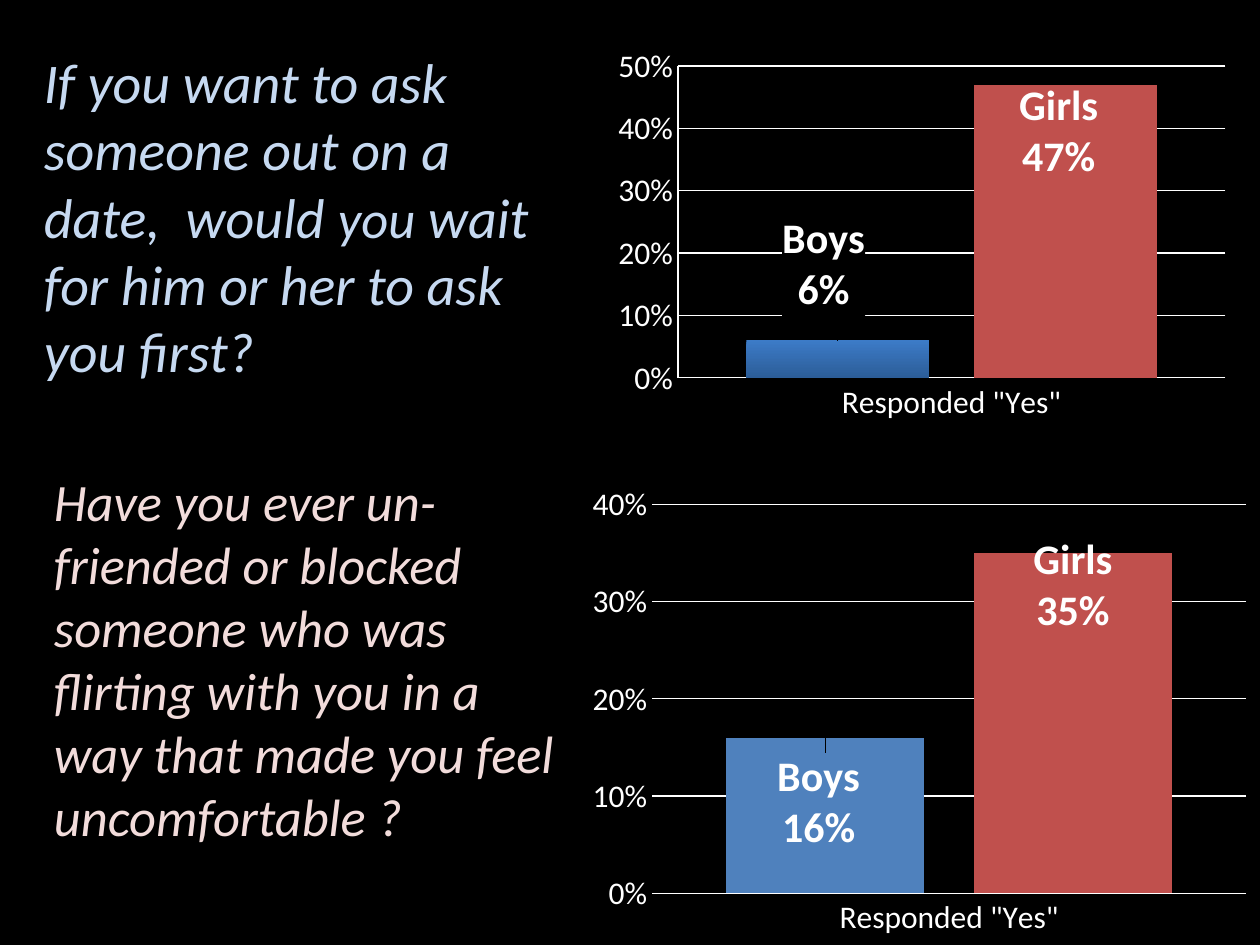
from lxml import etree
from pptx import Presentation
from pptx.chart.data import CategoryChartData
from pptx.dml.color import RGBColor
from pptx.enum.chart import XL_CHART_TYPE, XL_LABEL_POSITION as Pos, XL_TICK_MARK as Tick
from pptx.enum.text import MSO_AUTO_SIZE as Auto
from pptx.oxml import parse_xml
from pptx.oxml.ns import nsdecls, qn
from pptx.util import Inches, Pt

COLORS = {
    "black": "000000", "white": "FFFFFF", "ice": "C6D9F1", "blush": "F2DCDB",
    "boys": "4F81BD", "girls": "C0504D", "boys_top": "3C7BC7", "boys_bottom": "2C5D98",
}
FONT = "Calibri"


def rgb(name):
    return RGBColor.from_string(COLORS[name])


def layout_xml(target="", **values):
    """Manual chart layout, as fractions of the chart's size."""
    parts = "".join(f'<c:{key} val="{value}"/>' for key, value in values.items())
    return parse_xml(f'<c:layout {nsdecls("c")}><c:manualLayout>{target}{parts}'
                     "</c:manualLayout></c:layout>")


class SlideBuilder:
    def __init__(self, prs):
        self.s = prs.slides.add_slide(prs.slide_layouts[6])
        fill = self.s.background.fill
        fill.solid()
        fill.fore_color.rgb = rgb("black")

    def question(self, box, color, runs):
        tf = self.s.shapes.add_textbox(*map(Inches, box)).text_frame
        tf.word_wrap = True
        tf.auto_size = Auto.SHAPE_TO_FIT_TEXT
        p = tf.paragraphs[0]
        for text, size in runs:
            r = p.add_run()
            r.text = text
            r.font.name, r.font.size, r.font.italic = FONT, Pt(size), True
            r.font.color.rgb = rgb(color)

    def chart(self, box, values, top, plot_area):
        data = CategoryChartData(number_format="0%")
        data.categories = ['Responded "Yes"']
        for name, value in values.items():
            data.add_series(name, [value])
        chart = self.s.shapes.add_chart(
            XL_CHART_TYPE.COLUMN_CLUSTERED, *map(Inches, box), data).chart
        chart.has_legend = chart.has_title = False
        self.style_font(chart.font, 18)

        # Axes
        axis = chart.value_axis
        axis.minimum_scale, axis.maximum_scale, axis.major_unit = 0, top, 0.1
        axis.tick_labels.number_format = "0%"
        axis.tick_labels.number_format_is_linked = False
        axis.has_major_gridlines = True
        for ax in (axis, chart.category_axis):
            ax.major_tick_mark = ax.minor_tick_mark = Tick.NONE
        for part in (axis, chart.category_axis, axis.major_gridlines):
            part.format.line.color.rgb = rgb("white")
            part.format.line.width = Pt(0.75)

        # Columns
        plot = chart.plots[0]
        plot.gap_width, plot.overlap, plot.vary_by_categories = 75, -25, False
        for series in plot.series:
            series.format.fill.solid()
            series.format.fill.fore_color.rgb = rgb(series.name.lower())

        # Inner plot area
        area = chart._chartSpace.find(".//" + qn("c:plotArea"))
        for old in area.findall(qn("c:layout")):
            area.remove(old)
        x, y, w, h = plot_area
        target = '<c:layoutTarget val="inner"/><c:xMode val="edge"/><c:yMode val="edge"/>'
        area.insert(0, layout_xml(target, x=x, y=y, w=w, h=h))
        return chart

    def style_font(self, font, size, bold=False):
        font.name, font.size, font.bold = FONT, Pt(size), bold
        font.color.rgb = rgb("white")

    def label(self, series, dx, dy, backed=False):
        """Name over value, shifted from the top of the column."""
        label = series.points[0].data_label
        self.style_font(label.font, 24, bold=True)
        label.position = Pos.OUTSIDE_END
        el = series._element.find(".//" + qn("c:dLbl"))
        el.find(qn("c:showSerName")).set("val", "1")
        etree.SubElement(el, qn("c:separator")).text = "\n"
        el.insert(1, layout_xml(x=dx, y=dy))
        if backed:
            for old in el.findall(qn("c:spPr")):
                el.remove(old)
            el.insert(2, parse_xml(
                f'<c:spPr {nsdecls("c", "a")}><a:solidFill><a:srgbClr '
                f'val="{COLORS["black"]}"/></a:solidFill></c:spPr>'))

    def shade(self, series, first, last):
        fill = series.format.fill
        fill.gradient()
        fill.gradient_angle = 270
        for stop, color in zip(fill.gradient_stops, (first, last)):
            stop.color.rgb = rgb(color)


def main():
    prs = Presentation()
    prs.slide_width, prs.slide_height = Inches(10), Inches(7.5)
    slide = SlideBuilder(prs)

    # Asking someone out
    asking = slide.chart((4.5, 0, 5.5, 3.75), {"Boys": 0.06, "Girls": 0.47},
                         0.5, (0.16, 0.14, 0.79, 0.66))
    boys, girls = asking.plots[0].series
    slide.shade(boys, "boys_top", "boys_bottom")
    slide.label(boys, -0.02, -0.04, backed=True)
    slide.label(girls, -0.01, 0.22)
    slide.question((0.25, 0.33, 4.33, 2.79), "ice", [
        ("If you want to ask someone out on a date,  would ", 32),
        ("you", 30),
        (" wait for him or her to ask you first?", 32)])

    # Blocking someone
    slide.question((0.33, 3.67, 4.33, 3.13), "blush", [
        ("Have you ever un-friended or blocked someone who was flirting with you "
         "in a way that made you feel uncomfortable ?", 30)])
    blocking = slide.chart((4.58, 3.78, 5.42, 3.72), {"Boys": 0.16, "Girls": 0.35},
                           0.4, (0.11, 0.06, 0.87, 0.83))
    blocking.value_axis.format.line.fill.background()
    boys, girls = blocking.plots[0].series
    slide.label(boys, -0.01, 0.26)
    slide.label(girls, 0, 0.19)

    prs.save("out.pptx")


if __name__ == "__main__":
    main()
